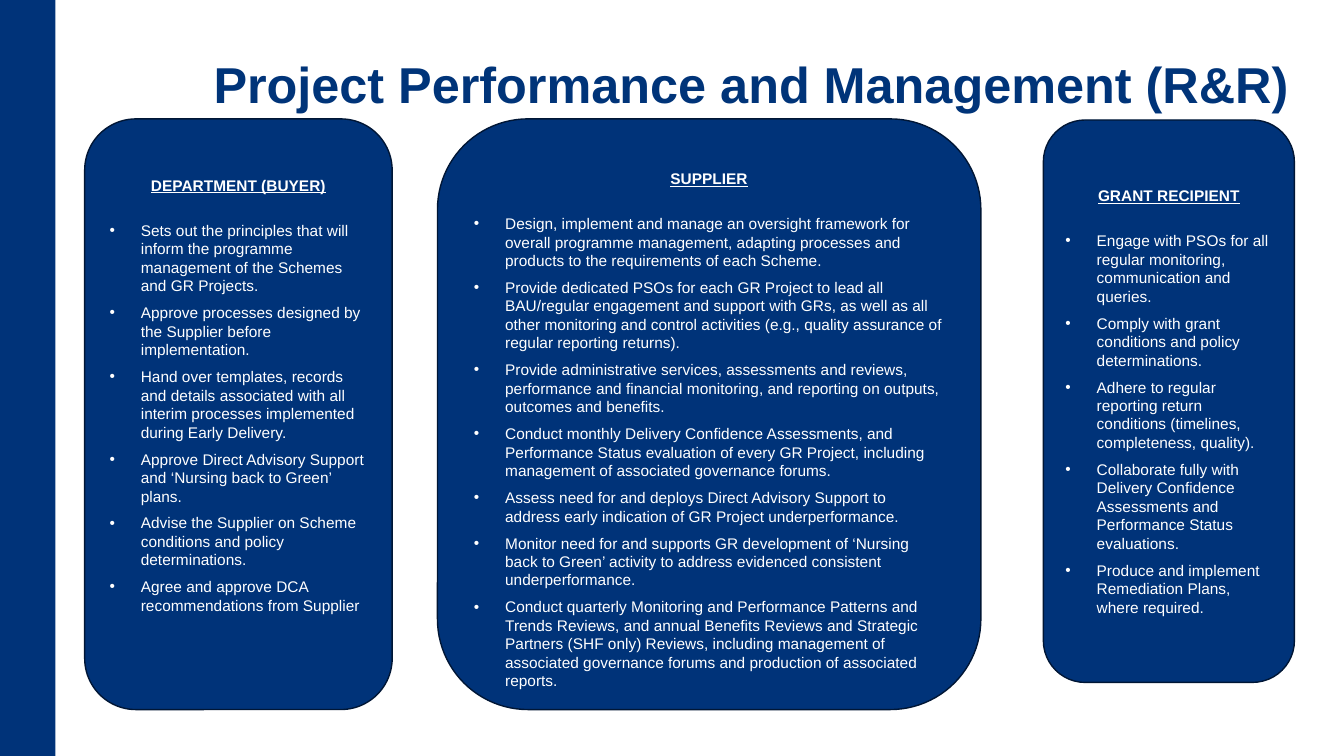
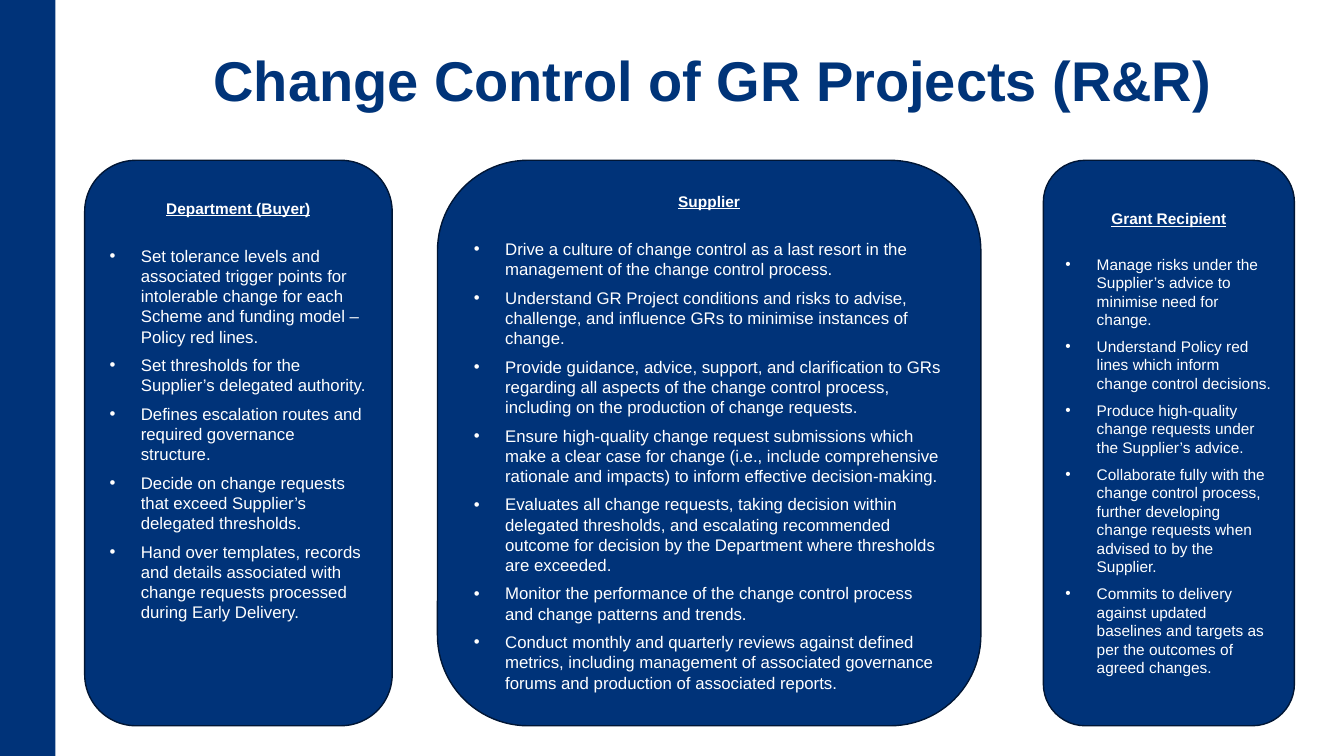
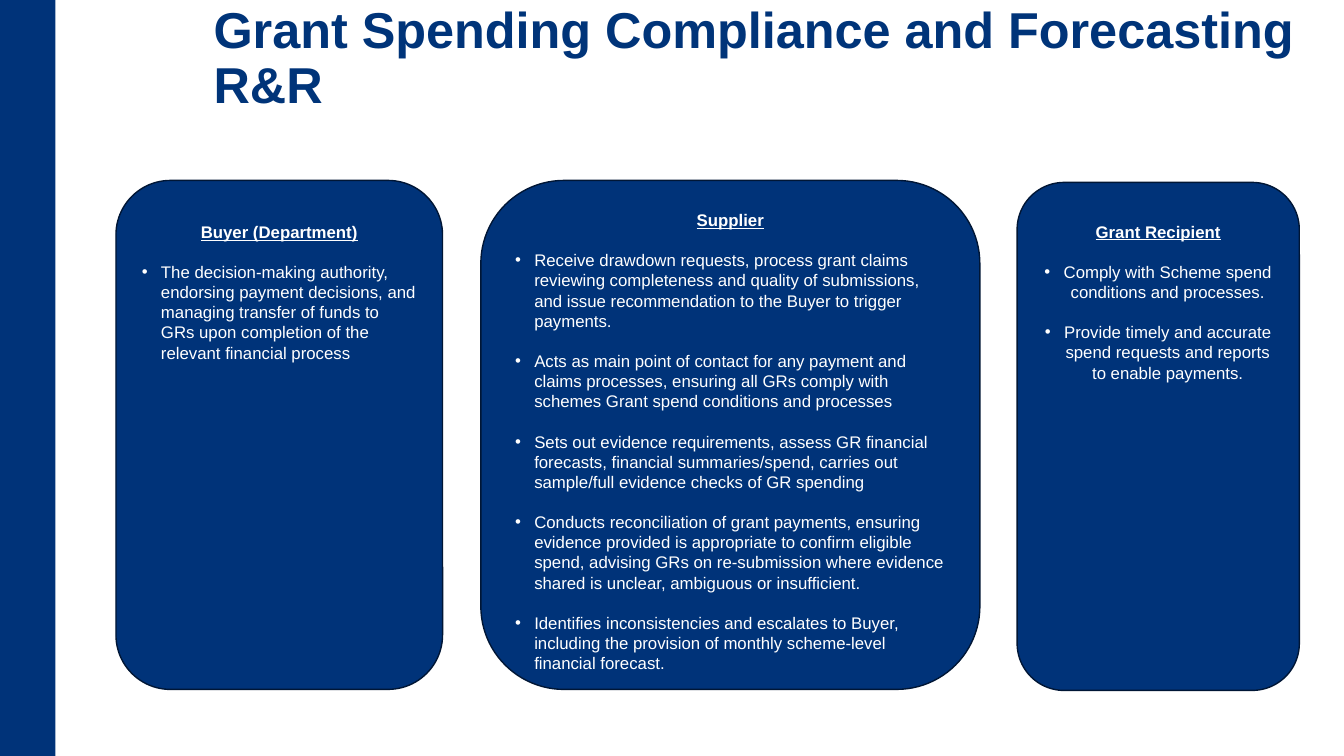
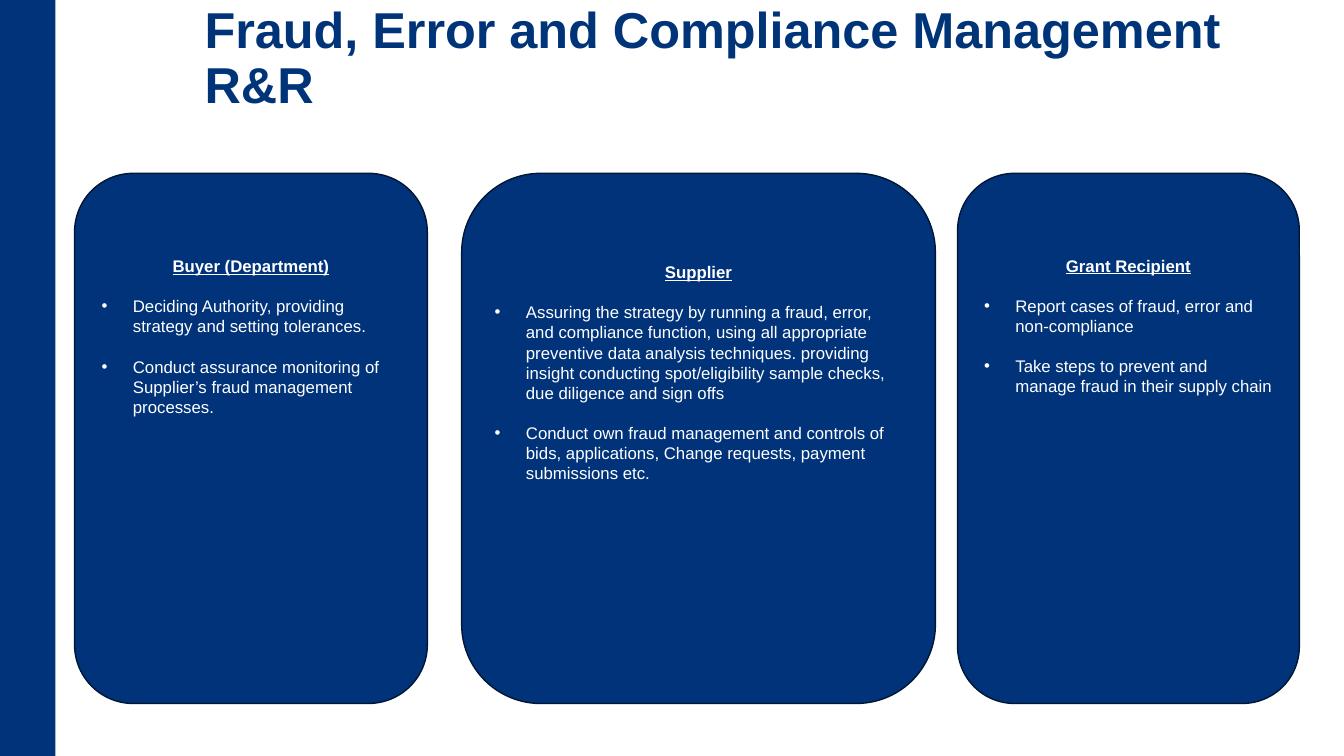
from dataclasses import dataclass
from typing import NamedTuple

from lxml.etree import SubElement
from pptx import Presentation
from pptx.dml.color import RGBColor
from pptx.enum.shapes import MSO_SHAPE as Shape
from pptx.enum.text import MSO_ANCHOR as Anchor, PP_ALIGN as Align
from pptx.oxml.ns import qn
from pptx.util import Inches, Pt

NAVY = RGBColor(0x00, 0x33, 0x79)
INK = RGBColor(0x00, 0x34, 0x79)
EDGE = RGBColor(0x00, 0x16, 0x35)
WHITE = RGBColor(0xFF, 0xFF, 0xFF)
FONT = "Arial"
WIDE, HIGH = Inches(13.33), Inches(7.5)
PAD = Pt(3.6)
LEAD = 1.195  # line height as a multiple of the text size


class Span(NamedTuple):
    """Start and size, in percent of the slide's width or height."""
    start: float
    size: float


@dataclass(frozen=True)
class Panel:
    col: Span
    row: Span
    head: str
    items: tuple[str, ...]
    drop: int = 0  # lines left free above the heading
    mid: bool = False
    size: int = 12
    top: int = 12  # size of the heading
    gap: float = 12 * LEAD  # points between items
    ind: float = 0.31
    align: Align = Align.LEFT


@dataclass(frozen=True)
class Page:
    title: str
    panels: tuple[Panel, ...]
    size: int = 36
    left: float = 15.15


def place(col: Span, row: Span) -> tuple[int, ...]:
    return tuple(int(whole * part / 100) for whole, part in
                 ((WIDE, col.start), (HIGH, row.start),
                  (WIDE, col.size), (HIGH, row.size)))


def style(para, size: float, color: RGBColor, bold: bool = False,
          under: bool = False) -> None:
    for run in para.runs:
        font = run.font
        font.name, font.size, font.bold = FONT, Pt(size), bold
        font.underline = under
        font.color.rgb = color


def bullet(para, ind: float) -> None:
    props = para._p.get_or_add_pPr()
    props.set("marL", str(Inches(ind)))
    props.set("indent", str(-Inches(ind)))
    SubElement(props, qn("a:buFont")).set("typeface", FONT)
    SubElement(props, qn("a:buChar")).set("char", "•")


def add_band(slide) -> None:
    band = slide.shapes.add_shape(Shape.RECTANGLE, 0, 0, Inches(0.55), HIGH)
    band.shadow.inherit = False
    band.fill.solid()
    band.fill.fore_color.rgb = NAVY
    band.line.fill.background()


def add_title(slide, page: Page) -> None:
    box = slide.shapes.add_textbox(*place(Span(page.left, 83.85), Span(4, 11.73)))
    frame = box.text_frame
    frame.word_wrap = True
    frame.vertical_anchor = Anchor.BOTTOM
    frame.text = page.title
    para = frame.paragraphs[0]
    para.line_spacing = 0.9
    style(para, page.size, INK, bold=True)


def add_panel(slide, panel: Panel) -> None:
    box = slide.shapes.add_shape(Shape.ROUNDED_RECTANGLE,
                                 *place(panel.col, panel.row))
    box.shadow.inherit = False
    box.fill.solid()
    box.fill.fore_color.rgb = NAVY
    box.line.color.rgb = EDGE
    box.line.width = Pt(1)
    frame = box.text_frame
    frame.word_wrap = True
    frame.vertical_anchor = Anchor.MIDDLE if panel.mid else Anchor.TOP
    frame.margin_top = PAD + Pt(panel.drop * panel.top * LEAD)
    frame.text = "\n".join((panel.head, *panel.items))
    head, *rest = frame.paragraphs
    head.alignment = Align.CENTER
    # Tight lists leave one line plus their own gap below the heading.
    tight = panel.gap < panel.size
    head.space_after = Pt(panel.size * LEAD + (panel.gap if tight else 0))
    style(head, panel.top, WHITE, bold=True, under=True)
    for para in rest:
        para.alignment = panel.align
        if tight or para is not rest[-1]:
            para.space_after = Pt(panel.gap)
        bullet(para, panel.ind)
        style(para, panel.size, WHITE)


LEFT, MAIN, RIGHT = Span(6.3, 22.88), Span(32.55, 40.43), Span(77.63, 18.68)
ROLES = Span(15.73, 78.13)
CHANGE = Span(21.2, 74.8)
SPEND = Span(23.87, 67.33)
FRAUD = Span(22.93, 70.13)

PAGES = (
    Page("Project Performance and Management (R&R)", (
        Panel(LEFT, ROLES, "DEPARTMENT (BUYER)", (
            "Sets out the principles that will inform the programme management of the Schemes and GR Projects.",
            "Approve processes designed by the Supplier before implementation.",
            "Hand over templates, records and details associated with all interim processes implemented during Early Delivery.",
            "Approve Direct Advisory Support and ‘Nursing back to Green’ plans.",
            "Advise the Supplier on Scheme conditions and policy determinations.",
            "Agree and approve DCA recommendations from Supplier",
        ), drop=2, size=11, top=11, gap=6),
        Panel(MAIN, ROLES, "SUPPLIER", (
            "Design, implement and manage an oversight framework for overall programme management, adapting processes and products to the requirements of each Scheme.",
            "Provide dedicated PSOs for each GR Project to lead all BAU/regular engagement and support with GRs, as well as all other monitoring and control activities (e.g., quality assurance of regular reporting returns).",
            "Provide administrative services, assessments and reviews, performance and financial monitoring, and reporting on outputs, outcomes and benefits.",
            "Conduct monthly Delivery Confidence Assessments, and Performance Status evaluation of every GR Project, including management of associated governance forums.",
            "Assess need for and deploys Direct Advisory Support to address early indication of GR Project underperformance.",
            "Monitor need for and supports GR development of ‘Nursing back to Green’ activity to address evidenced consistent underperformance.",
            "Conduct quarterly Monitoring and Performance Patterns and Trends Reviews, and annual Benefits Reviews and Strategic Partners (SHF only) Reviews, including management of associated governance forums and production of associated reports.",
        ), drop=1, size=11, top=11, gap=6),
        Panel(RIGHT, Span(15.87, 74.4), "GRANT RECIPIENT", (
            "Engage with PSOs for all regular monitoring, communication and queries.",
            "Comply with grant conditions and policy determinations.",
            "Adhere to regular reporting return conditions (timelines, completeness, quality).",
            "Collaborate fully with Delivery Confidence Assessments and Performance Status evaluations.",
            "Produce and implement Remediation Plans, where required.",
        ), mid=True, size=11, top=11, gap=6),
    )),
    Page("Change Control of GR Projects (R&R)", (
        Panel(LEFT, CHANGE, "Department (Buyer)", (
            "Set tolerance levels and associated trigger points for intolerable change for each Scheme and funding model – Policy red lines.",
            "Set thresholds for the Supplier’s delegated authority.",
            "Defines escalation routes and required governance structure.",
            "Decide on change requests that exceed Supplier’s delegated thresholds.",
            "Hand over templates, records and details associated with change requests processed during Early Delivery.",
        ), drop=1, top=11, gap=6),
        Panel(MAIN, CHANGE, "Supplier", (
            "Drive a culture of change control as a last resort in the management of the change control process.",
            "Understand GR Project conditions and risks to advise, challenge, and influence GRs to minimise instances of change.",
            "Provide guidance, advice, support, and clarification to GRs regarding all aspects of the change control process, including on the production of change requests.",
            "Ensure high-quality change request submissions which make a clear case for change (i.e., include comprehensive rationale and impacts) to inform effective decision-making.",
            "Evaluates all change requests, taking decision within delegated thresholds, and escalating recommended outcome for decision by the Department where thresholds are exceeded.",
            "Monitor the performance of the change control process and change patterns and trends.",
            "Conduct monthly and quarterly reviews against defined metrics, including management of associated governance forums and production of associated reports.",
        ), top=11, gap=6),
        Panel(RIGHT, CHANGE, "Grant Recipient", (
            "Manage risks under the Supplier’s advice to minimise need for change.",
            "Understand Policy red lines which inform change control decisions.",
            "Produce high-quality change requests under the Supplier’s advice.",
            "Collaborate fully with the change control process, further developing change requests when advised to by the Supplier.",
            "Commits to delivery against updated baselines and targets as per the outcomes of agreed changes.",
        ), mid=True, size=11, top=11, gap=6),
    ), size=40),
    Page("Grant Spending Compliance and Forecasting R&R", (
        Panel(Span(8.63, 24.3), SPEND, "Buyer (Department)", (
            "The decision-making authority, endorsing payment decisions, and managing transfer of funds to GRs upon completion of the relevant financial process",
        ), drop=1, ind=0.19),
        Panel(Span(35.78, 37.13), SPEND, "Supplier", (
            "Receive drawdown requests, process grant claims reviewing completeness and quality of submissions, and issue recommendation to the Buyer to trigger payments.",
            "Acts as main point of contact for any payment and claims processes, ensuring all GRs comply with schemes Grant spend conditions and processes",
            "Sets out evidence requirements, assess GR financial forecasts, financial summaries/spend, carries out sample/full evidence checks of GR spending",
            "Conducts reconciliation of grant payments, ensuring evidence provided is appropriate to confirm eligible spend, advising GRs on re-submission where evidence shared is unclear, ambiguous or insufficient.",
            "Identifies inconsistencies and escalates to Buyer, including the provision of monthly scheme-level financial forecast.",
        ), ind=0.19),
        Panel(Span(75.68, 21), Span(24.13, 67.2), "Grant Recipient", (
            "Comply with Scheme spend conditions and processes.",
            "Provide timely and accurate spend requests and reports to enable payments.",
        ), drop=1, ind=0.19, align=Align.CENTER),
    )),
    Page("Fraud, Error and Compliance Management R&R", (
        Panel(Span(5.55, 26.25), FRAUD, "Buyer (Department)", (
            "Deciding Authority, providing strategy and setting tolerances.",
            "Conduct assurance monitoring of Supplier’s fraud management processes.",
        ), drop=3),
        Panel(Span(34.35, 35.25), FRAUD, "Supplier", (
            "Assuring the strategy by running a fraud, error, and compliance function, using all appropriate preventive data analysis techniques. providing insight conducting spot/eligibility sample checks, due diligence and sign offs",
            "Conduct own fraud management and controls of bids, applications, Change requests, payment submissions etc.",
        ), drop=3),
        Panel(Span(71.25, 25.43), FRAUD, "Grant Recipient", (
            "Report cases of fraud, error and non-compliance",
            "Take steps to prevent and manage fraud in their supply chain",
        ), drop=3),
    ), left=14.48),
)


def main() -> None:
    deck = Presentation()
    deck.slide_width, deck.slide_height = WIDE, HIGH
    for page in PAGES:
        slide = deck.slides.add_slide(deck.slide_layouts[6])
        add_band(slide)
        add_title(slide, page)
        for panel in page.panels:
            add_panel(slide, panel)
    deck.save("out.pptx")


if __name__ == "__main__":
    main()
